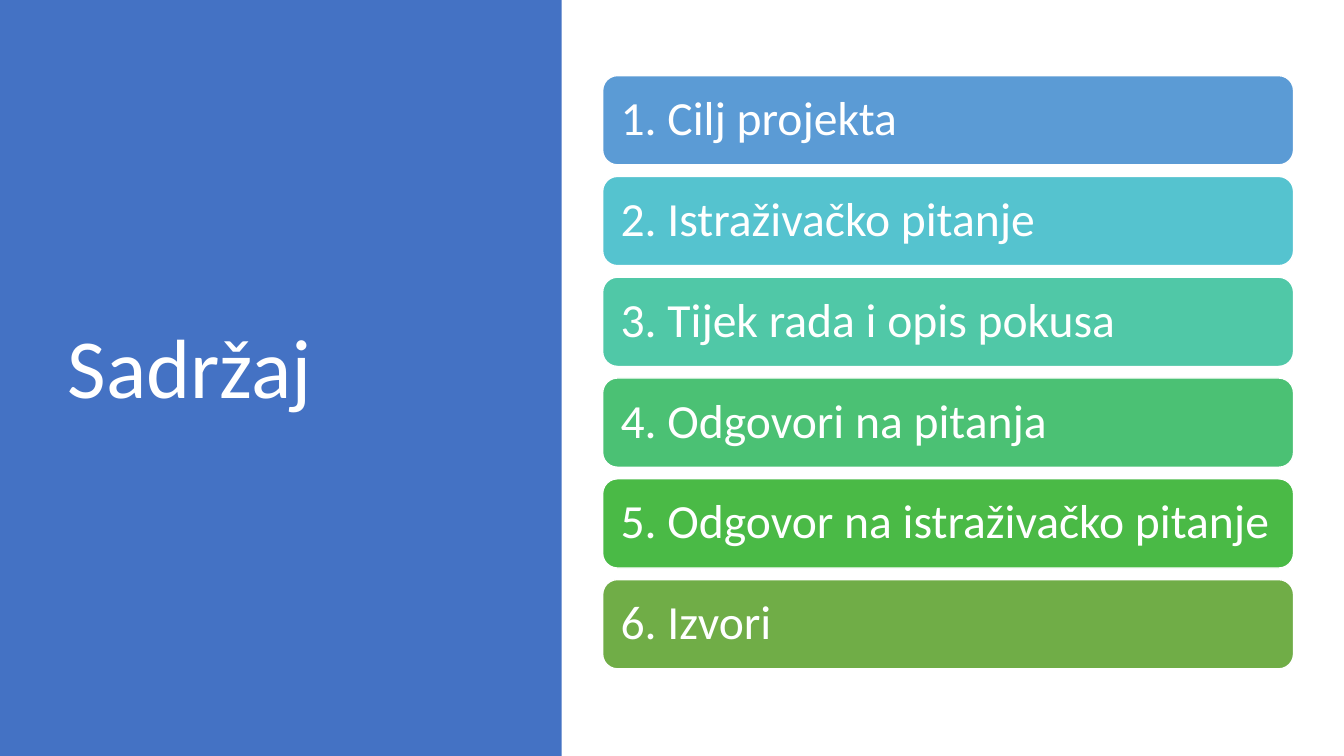
from pptx import Presentation
from pptx.dml.color import RGBColor
from pptx.enum import shapes, text
from pptx import util as u

PX = 9525  # EMU per px, 96 px to the inch
WHITE = RGBColor(0xFF, 0xFF, 0xFF)
BLUE = RGBColor(0x44, 0x72, 0xC4)
TOPICS = [
    ("1. Cilj projekta", RGBColor(0x5B, 0x9B, 0xD5)),
    ("2. Istraživačko pitanje", RGBColor(0x55, 0xC3, 0xCF)),
    ("3. Tijek rada i opis pokusa", RGBColor(0x50, 0xC8, 0xA7)),
    ("4. Odgovori na pitanja", RGBColor(0x4B, 0xC1, 0x74)),
    ("5. Odgovor na istraživačko pitanje", RGBColor(0x4A, 0xBA, 0x46)),
    ("6. Izvori", RGBColor(0x70, 0xAD, 0x47)),
]


def add_block(kind, fill, *box):
    block = slide.shapes.add_shape(kind, *[n * PX for n in box])
    block.shadow.inherit = False
    block.fill.solid()
    block.fill.fore_color.rgb = fill
    return block


def write(shape, words, size):
    frame = shape.text_frame
    frame.text = words
    look = {"word_wrap": True, "auto_size": text.MSO_AUTO_SIZE.NONE,
            "vertical_anchor": text.MSO_ANCHOR.MIDDLE}
    for name, value in look.items():
        setattr(frame, name, value)
    para = frame.paragraphs[0]
    para.alignment = text.PP_ALIGN.LEFT
    para.line_spacing = 0.9
    for name, value in {"name": "Calibri", "size": u.Pt(size)}.items():
        setattr(para.font, name, value)
    para.font.color.rgb = WHITE


deck = Presentation()
deck.slide_width, deck.slide_height = 1280 * PX, 720 * PX
slide = deck.slides.add_slide(deck.slide_layouts[5])

# Left panel, placed behind the title
panel = add_block(shapes.MSO_SHAPE.RECTANGLE, BLUE, 0, 0, 535, 720)
panel.line.fill.background()
title = slide.shapes.title
panel._element.addnext(title._element)

# Title
place = {"left": 55, "top": 65, "width": 399, "height": 578}
for name, value in place.items():
    setattr(title, name, value * PX)
write(title, "Sadržaj", 60)

# Stack of topics
for row, (topic, fill) in enumerate(TOPICS):
    bar = add_block(shapes.MSO_SHAPE.ROUNDED_RECTANGLE, fill,
                    574, 72 + row * 96, 658, 85)
    bar.line.color.rgb = WHITE
    bar.line.width = u.Pt(1)
    write(bar, topic, 34)
    for side in ("left", "right"):
        setattr(bar.text_frame, "margin_" + side, 13 * PX)

deck.save("out.pptx")
